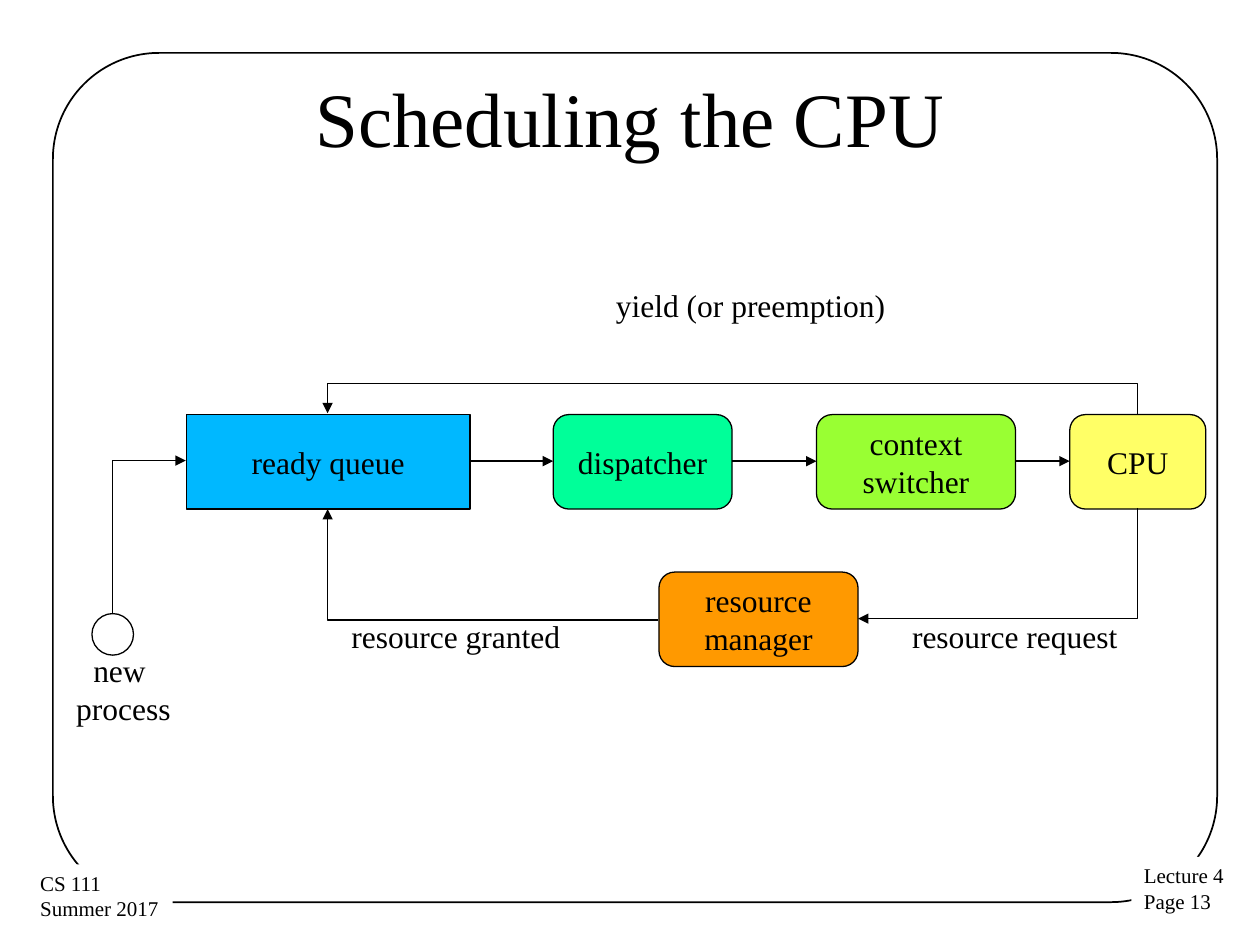
"""Builds the CPU scheduling slide: a flow of boxes joined by arrows."""
from lxml import etree
from pptx import Presentation
from pptx.dml.color import RGBColor
from pptx.enum.shapes import MSO_CONNECTOR, MSO_SHAPE
from pptx.enum.text import MSO_ANCHOR, MSO_AUTO_SIZE, PP_ALIGN
from pptx.oxml.ns import qn
from pptx.util import Inches, Pt

STRAIGHT, ELBOW = MSO_CONNECTOR.STRAIGHT, MSO_CONNECTOR.ELBOW
RECTANGLE, FRAME, CIRCLE = MSO_SHAPE.RECTANGLE, MSO_SHAPE.ROUNDED_RECTANGLE, MSO_SHAPE.OVAL
PROCESS = MSO_SHAPE.FLOWCHART_ALTERNATE_PROCESS
LEFT, CENTER = PP_ALIGN.LEFT, PP_ALIGN.CENTER
TOP, MIDDLE = MSO_ANCHOR.TOP, MSO_ANCHOR.MIDDLE
NO_FIT, FIT_SHAPE = MSO_AUTO_SIZE.NONE, MSO_AUTO_SIZE.SHAPE_TO_FIT_TEXT

FONT = "Times New Roman"
COLORS = {
    "ink": "000000",
    "paper": "FFFFFF",
    "queue": "00B8FF",
    "dispatcher": "00FF99",
    "switcher": "99FF33",
    "cpu": "FFFF66",
    "manager": "FF9900",
}
ROW_TOP, BOX_HEIGHT, ROW_MIDDLE = 3.29, 0.75, 3.66


def color(name):
    """Return the named colour."""
    return RGBColor.from_string(COLORS[name])


def write(shape, text, size=18, align=LEFT, anchor=TOP, wrap=False, fit=NO_FIT):
    """Put formatted text into a shape."""
    frame = shape.text_frame
    frame.text = text
    frame.word_wrap = wrap
    frame.auto_size = fit
    frame.vertical_anchor = anchor
    for paragraph in frame.paragraphs:
        paragraph.alignment = align
        for run in paragraph.runs:
            run.font.name = FONT
            run.font.size = Pt(size)
            run.font.color.rgb = color("ink")


def add_shape(slide, kind, box, fill=None, line_width=0.75):
    """Add a preset shape, unfilled or unlined where none is given."""
    shape = slide.shapes.add_shape(kind, *map(Inches, box))
    shape.shadow.inherit = False
    if fill:
        shape.fill.solid()
        shape.fill.fore_color.rgb = color(fill)
    else:
        shape.fill.background()
    if line_width:
        shape.line.color.rgb = color("ink")
        shape.line.width = Pt(line_width)
    else:
        shape.line.fill.background()
    return shape


def add_step(slide, text, left, width, fill, top=ROW_TOP, kind=PROCESS):
    """Add one labelled box of the flow."""
    shape = add_shape(slide, kind, (left, top, width, BOX_HEIGHT), fill)
    write(shape, text, align=CENTER, anchor=MIDDLE)


def add_label(slide, text, box, **style):
    """Add a text box."""
    write(slide.shapes.add_textbox(*map(Inches, box)), text, **style)


def add_footer(slide, text, box):
    """Add a white corner block that covers the frame."""
    write(add_shape(slide, RECTANGLE, box, "paper", 0), text, size=12, fit=FIT_SHAPE)


def add_arrow(slide, kind, start, end):
    """Add a connector with an arrowhead at its end."""
    arrow = slide.shapes.add_connector(kind, *map(Inches, start + end))
    arrow.line.color.rgb = color("ink")
    arrow.line.width = Pt(0.75)
    etree.SubElement(arrow.line._get_or_add_ln(), qn("a:tailEnd"), type="triangle")
    etree.SubElement(arrow._element.spPr, qn("a:effectLst"))
    return arrow


def add_bent_arrow(slide, box, rotation, bend=None):
    """Add a turned elbow arrow with one corner, or two when a bend is given."""
    left, top, width, height = box
    arrow = add_arrow(slide, ELBOW, (left, top), (left + width, top + height))
    properties = arrow._element.spPr
    transform = properties.find(qn("a:xfrm"))
    transform.set("rot", str(rotation * 60000))
    geometry = properties.find(qn("a:prstGeom"))
    if bend is None:
        geometry.set("prst", "bentConnector2")
    else:
        transform.set("flipV", "1")
        guides = geometry.find(qn("a:avLst"))
        etree.SubElement(guides, qn("a:gd"), name="adj1", fmla=f"val {bend * 100000}")


def main():
    """Build and save the slide."""
    presentation = Presentation()
    presentation.slide_width, presentation.slide_height = Inches(10), Inches(7.5)
    slide = presentation.slides.add_slide(presentation.slide_layouts[6])

    frame = add_shape(slide, FRAME, (0.42, 0.42, 9.24, 6.74), line_width=1)
    frame.adjustments[0] = 0.125
    add_footer(slide, "Lecture 4\nPage 13", (8.98, 6.8, 0.85, 0.51))
    add_footer(slide, "CS 111\nSummer 2017", (0.22, 6.86, 1.15, 0.51))
    add_label(slide, "Scheduling the CPU", (0.5, 0.3, 9, 1.25),
              size=44, align=CENTER, anchor=MIDDLE, wrap=True)

    steps = [
        ("ready queue", 1.48, 2.25, "queue", RECTANGLE),
        ("dispatcher", 4.39, 1.42, "dispatcher", PROCESS),
        ("context\nswitcher", 6.48, 1.58, "switcher", PROCESS),
        ("CPU", 8.49, 1.08, "cpu", PROCESS),
    ]
    for text, left, width, fill, kind in steps:
        add_step(slide, text, left, width, fill, kind=kind)
    for (_, left, width, *_), (_, next_left, *_) in zip(steps, steps[1:]):
        add_arrow(slide, STRAIGHT, (left + width, ROW_MIDDLE), (next_left, ROW_MIDDLE))
    add_step(slide, "resource\nmanager", 5.23, 1.58, "manager", top=4.54)
    add_shape(slide, CIRCLE, (0.73, 4.87, 0.33, 0.33))

    add_bent_arrow(slide, (5.81, 0.07, 0.01, 6.43), 270, bend=25)
    add_bent_arrow(slide, (7.48, 3.36, 0.88, 2.22), 90)
    add_bent_arrow(slide, (2.6, 4.04, 2.62, 0.88), 180)
    add_bent_arrow(slide, (0.58, 3.97, 1.21, 0.58), 270)

    add_label(slide, "yield (or preemption)", (4.79, 2.22, 2.38, 0.4), fit=FIT_SHAPE)
    add_label(slide, "resource request", (7.14, 4.85, 1.85, 0.4), fit=FIT_SHAPE)
    add_label(slide, "resource granted", (2.69, 4.85, 1.88, 0.4), fit=FIT_SHAPE)
    add_label(slide, "new \nprocess", (0.5, 5.12, 0.96, 0.71), align=CENTER, fit=FIT_SHAPE)
    presentation.save("out.pptx")


if __name__ == "__main__":
    main()
